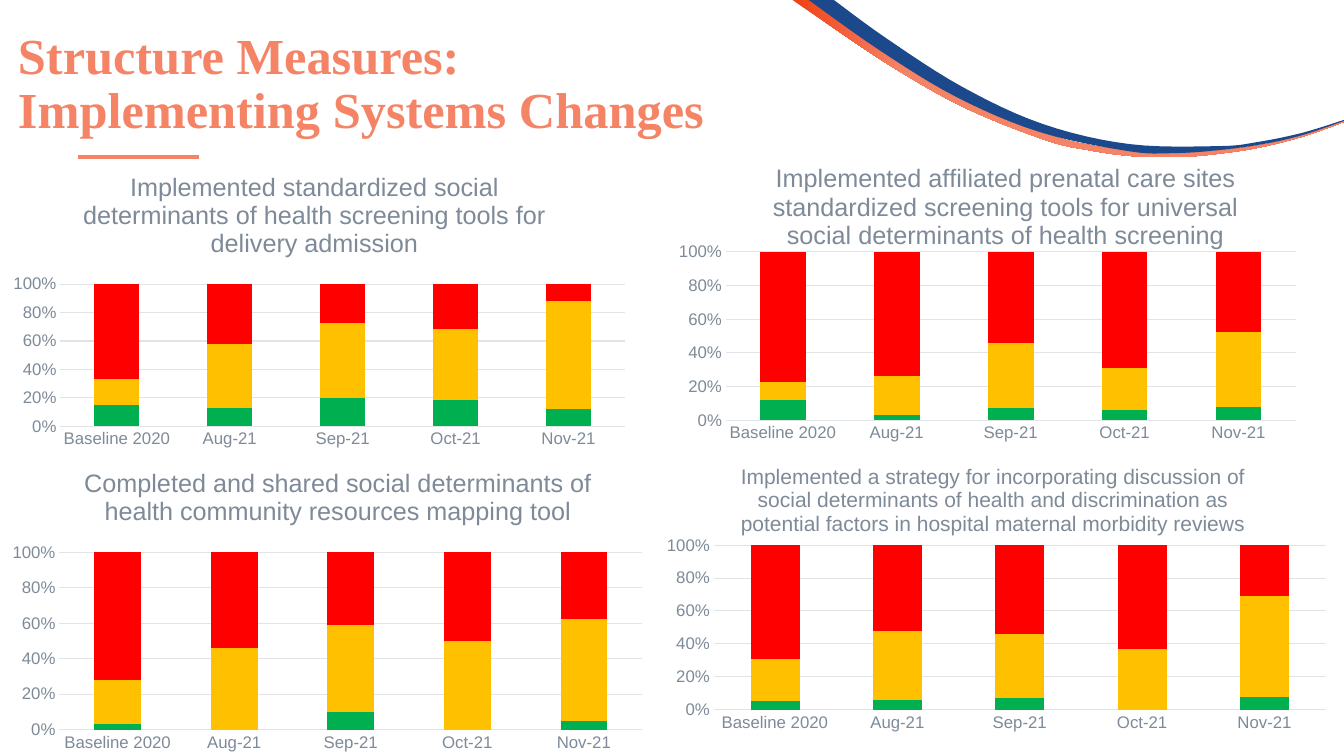
from lxml.etree import SubElement
from pptx import Presentation
from pptx.chart.data import CategoryChartData
from pptx.dml.color import RGBColor
from pptx.enum.chart import XL_CHART_TYPE as ChartType, XL_TICK_MARK as Tick
from pptx.enum.shapes import MSO_CONNECTOR as Connector
from pptx.enum.text import MSO_ANCHOR as Anchor
from pptx.oxml import parse_xml
from pptx.oxml.ns import nsdecls, qn
from pptx.util import Cm, Pt

COLORS = {
    "title": "F58466", "coral": "F58366", "orange": "F04115", "blue": "1C498B",
    "text": "7E8A98", "grid": "E1E4E7",
    "green": "00B050", "yellow": "FFC000", "red": "FF0000",
}
MONTHS = ["Baseline 2020", "Aug-21", "Sep-21", "Oct-21", "Nov-21"]
SERIES_COLORS = ["green", "yellow", "red"]
TITLE_TOP = 0.07

ORANGE_TOP = [(8.05, 0), (8.82, 0.54), (9.58, 0.99), (10.39, 1.33), (10.81, 1.44),
              (11.25, 1.5), (11.68, 1.52), (12.12, 1.49), (12.56, 1.43),
              (12.99, 1.32), (13.33, 1.2)]
ORANGE_BOTTOM = [(13.33, 1.21), (12.94, 1.35), (12.51, 1.46), (12.13, 1.52),
                 (11.69, 1.56), (11.24, 1.55), (10.8, 1.49), (10.37, 1.39),
                 (9.55, 1.06), (8.78, 0.62), (8.04, 0.12), (7.86, 0)]
BLUE_TOP = [(8.27, 0), (8.79, 0.38), (9.54, 0.86), (10.34, 1.23), (11.2, 1.43),
            (12.09, 1.45), (12.47, 1.41), (12.91, 1.32), (13.33, 1.19)]
BLUE_BOTTOM = [(13.33, 1.2), (12.92, 1.34), (12.53, 1.43), (12.09, 1.49),
               (11.64, 1.52), (11.19, 1.5), (10.31, 1.31), (9.48, 0.96),
               (8.71, 0.49), (8.02, 0)]

CHARTS = [
    {"title": "Implemented standardized social determinants of health screening "
              "tools for delivery admission",
     "size": 18, "title_left": 0.77,
     "box": (0.01, 1.57, 6.31, 2.94), "plot": (0.59, 1.25, 5.6, 1.41),
     "values": [(15, 13, 20, 19, 12), (18, 45, 53, 50, 75), (67, 42, 27, 32, 12)]},
    {"title": "Implemented affiliated prenatal care sites standardized screening "
              "tools for universal social determinants of health screening",
     "size": 18, "title_left": 1.04,
     "box": (6.58, 1.49, 6.42, 3.02), "plot": (0.62, 1.01, 5.65, 1.67),
     "values": [(12, 3, 7, 6, 8), (11, 23, 39, 25, 45), (77, 74, 54, 69, 48)]},
    {"title": "Completed and shared social determinants of health community "
              "resources mapping tool",
     "size": 18, "title_left": 0.8,
     "box": (-0.01, 4.51, 6.49, 3.01), "plot": (0.6, 0.97, 5.78, 1.76),
     "values": [(3, 0, 10, 0, 5), (25, 46, 49, 50, 58), (72, 54, 41, 50, 38)]},
    {"title": "Implemented a strategy for incorporating discussion of social "
              "determinants of health and discrimination as potential factors in "
              "hospital maternal morbidity reviews",
     "size": 15, "title_left": 0.83,
     "box": (6.48, 4.49, 6.84, 2.98), "plot": (0.6, 0.92, 6.07, 1.63),
     "values": [(5, 6, 7, 0, 8), (26, 42, 39, 37, 62), (69, 52, 54, 63, 31)]},
]


def inch(value):
    return Cm(value * 2.54)


def rgb(name):
    return RGBColor.from_string(COLORS[name])


def set_font(font, size, color, name="Arial", bold=False):
    font.size = Pt(size)
    font.name = name
    font.bold = bold
    font.color.rgb = rgb(color)


def smooth_edge(points, steps=6):
    padded = [points[0], *points, points[-1]]
    edge = [points[0]]
    for a, b, c, d in zip(padded, padded[1:], padded[2:], padded[3:]):
        for i in range(1, steps + 1):
            t = i / steps
            edge.append(tuple(
                (2 * q + (r - p) * t + (2 * p - 5 * q + 4 * r - s) * t ** 2
                 + (3 * q - p - 3 * r + s) * t ** 3) / 2
                for p, q, r, s in zip(a, b, c, d)))
    return edge


def add_wave(s, top, bottom):
    points = [(inch(x), inch(y)) for x, y in smooth_edge(top) + smooth_edge(bottom)]
    builder = s.shapes.build_freeform(*points[0])
    builder.add_line_segments(points[1:], close=True)
    sp = builder.convert_to_shape()
    sp.shadow.inherit = False
    sp.line.fill.background()
    return sp.fill


def add_rule(s, x1, x2, y):
    line = s.shapes.add_connector(Connector.STRAIGHT, inch(x1), inch(y), inch(x2), inch(y))
    line.line.color.rgb = rgb("coral")
    line.line.width = Pt(2.5)
    SubElement(line._element.spPr, qn("a:effectLst"))


def add_title(s, lines, box):
    tf = s.shapes.add_textbox(*map(inch, box)).text_frame
    tf.word_wrap = True
    tf.vertical_anchor = Anchor.MIDDLE
    p = tf.paragraphs[0]
    p.line_spacing = 0.9
    for i, text in enumerate(lines):
        if i:
            p.add_line_break()
        r = p.add_run()
        r.text = text
        set_font(r.font, 36, "title", "Times New Roman", True)


def set_layout(parent, index, fractions, inner=False):
    for old in parent.findall(qn("c:layout")):
        parent.remove(old)
    items = [("layoutTarget", "inner")] if inner else []
    items += [("xMode", "edge"), ("yMode", "edge")]
    items += [(key, f"{value:.4f}") for key, value in zip("xywh", fractions)]
    inside = "".join(f'<c:{key} val="{value}"/>' for key, value in items)
    parent.insert(index, parse_xml(
        f'<c:layout {nsdecls("c")}><c:manualLayout>{inside}</c:manualLayout></c:layout>'))


def style_axis(axis):
    axis.major_tick_mark = axis.minor_tick_mark = Tick.NONE
    set_font(axis.tick_labels.font, 12, "text")


def add_stacked_chart(s, title, size, title_left, box, plot, values):
    data = CategoryChartData()
    data.categories = MONTHS
    for i, row in enumerate(values, 1):
        data.add_series(f"Series {i}", row)
    chart = s.shapes.add_chart(
        ChartType.COLUMN_STACKED_100, *map(inch, box), data).chart
    chart.has_legend = False
    set_font(chart.font, 10, "text")

    chart.has_title = True
    r = chart.chart_title.text_frame.paragraphs[0].add_run()
    r.text = title
    set_font(r.font, size, "text")
    width, height = box[2:]
    set_layout(chart.chart_title._element, 1, (title_left / width, TITLE_TOP / height))
    plot_area = chart._chartSpace.chart.plotArea
    scale = (width, height, width, height)
    set_layout(plot_area, 0, [v / total for v, total in zip(plot, scale)], inner=True)

    columns = chart.plots[0]
    columns.gap_width = 150
    columns.overlap = 100
    columns.vary_by_categories = False
    for series, color in zip(columns.series, SERIES_COLORS):
        series.format.fill.solid()
        series.format.fill.fore_color.rgb = rgb(color)

    cat, val = chart.category_axis, chart.value_axis
    style_axis(cat)
    style_axis(val)
    val.tick_labels.number_format = "0%"
    val.tick_labels.number_format_is_linked = False
    val.format.line.fill.background()
    val.has_major_gridlines = True
    for line in (cat.format.line, val.major_gridlines.format.line):
        line.color.rgb = rgb("grid")
        line.width = Pt(0.75)


def main():
    prs = Presentation()
    prs.slide_width, prs.slide_height = inch(13.33), inch(7.5)
    s = prs.slides.add_slide(prs.slide_layouts[6])

    fill = add_wave(s, ORANGE_TOP, ORANGE_BOTTOM)
    fill.gradient()
    fill.gradient_angle = 0
    for stop, color, position in zip(fill.gradient_stops, ("orange", "coral"), (0, 0.2)):
        stop.color.rgb = rgb(color)
        stop.position = position
    fill = add_wave(s, BLUE_TOP, BLUE_BOTTOM)
    fill.solid()
    fill.fore_color.rgb = rgb("blue")

    add_rule(s, 0.77, 1.97, 1.56)
    add_title(s, ["Structure Measures:", "Implementing Systems Changes"],
              (0.08, 0.12, 12, 1.45))
    for chart in CHARTS:
        add_stacked_chart(s, **chart)
    prs.save("out.pptx")


if __name__ == "__main__":
    main()
